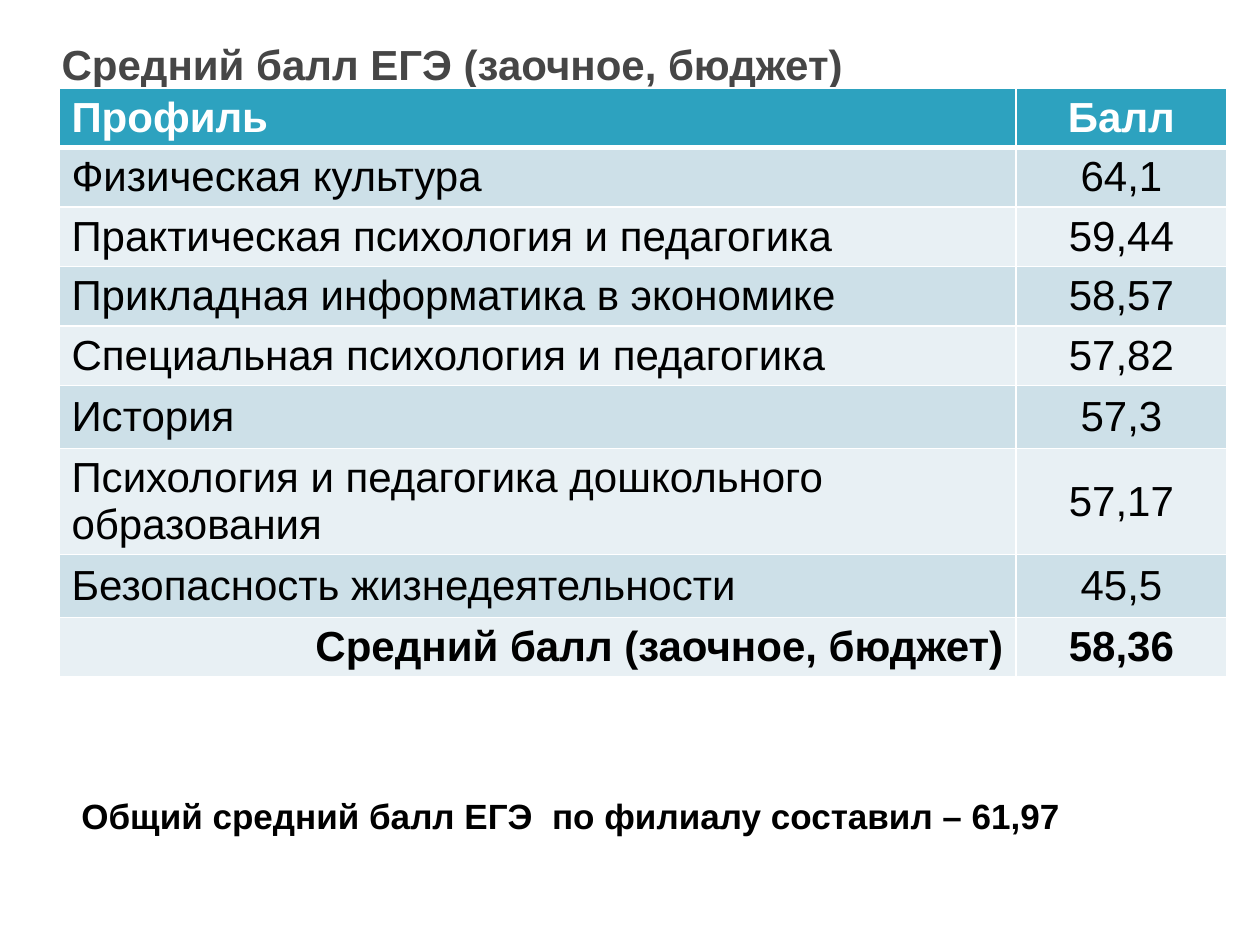
"""Build a slide with a table of average exam scores by study profile."""
from dataclasses import dataclass

from lxml import etree
from pptx import Presentation
from pptx.dml.color import RGBColor
from pptx.enum.text import MSO_ANCHOR, PP_ALIGN
from pptx.oxml.ns import qn
from pptx.util import Pt

LEFT, CENTER, RIGHT = PP_ALIGN.LEFT, PP_ALIGN.CENTER, PP_ALIGN.RIGHT
TOP, MIDDLE = MSO_ANCHOR.TOP, MSO_ANCHOR.MIDDLE

TITLE = "Средний балл ЕГЭ (заочное, бюджет)"
HEADER = ("Профиль", "Балл")
SCORES = [
    ("Физическая культура", "64,1"),
    ("Практическая психология и педагогика", "59,44"),
    ("Прикладная информатика в экономике", "58,57"),
    ("Специальная психология и педагогика", "57,82"),
    ("История", "57,3"),
    ("Психология и педагогика дошкольного образования", "57,17"),
    ("Безопасность жизнедеятельности", "45,5"),
]
TOTAL = ("Средний балл (заочное, бюджет)", "58,36")
SUMMARY = "Общий средний балл ЕГЭ  по филиалу составил – 61,97"

EMU_PER_PX = 914400 // 126
SLIDE_SIZE = (1260, 945)
TITLE_BOX = (49, 20, 1155, 88)
TABLE_BOX = (59, 88, 1168, 617)
SUMMARY_BOX = (69, 788, 1162, 55)
COLUMN_WIDTHS = (957, 211)
ROW_HEIGHT, TALL_ROW_HEIGHT = 52, 63
TALL_ROWS = (5, 6, 7)


@dataclass(frozen=True)
class Theme:
    font: str = "Arial"
    title: str = "464646"
    text: str = "000000"
    white: str = "FFFFFF"
    header: str = "2DA2BF"
    bands: tuple = ("E8F0F4", "CDE0E8")
    body_size: int = 24
    summary_size: int = 20
    border: int = 1
    header_border: int = 3


THEME = Theme()


def px(value):
    return value * EMU_PER_PX


def place(shape, box):
    shape.left, shape.top, shape.width, shape.height = map(px, box)


def write(frame, text, size=THEME.body_size, color=THEME.text, bold=False, align=LEFT):
    frame.word_wrap = True
    paragraph = frame.paragraphs[0]
    paragraph.alignment = align
    run = paragraph.add_run()
    run.text = text
    font = run.font
    font.name, font.size, font.bold = THEME.font, Pt(size), bold
    font.color.rgb = RGBColor.from_string(color)


def set_borders(cell, widths):
    properties = cell._tc.get_or_add_tcPr()
    for index, (side, width) in enumerate(widths.items()):
        line = etree.Element(qn(f"a:ln{side}"), w=str(Pt(width)))
        fill = etree.SubElement(line, qn("a:solidFill"))
        etree.SubElement(fill, qn("a:srgbClr"), val=THEME.white)
        properties.insert(index, line)


def add_scores(slide):
    rows = [HEADER, *SCORES, TOTAL]
    last = len(rows) - 1
    frame = slide.shapes.add_table(len(rows), len(HEADER), *map(px, TABLE_BOX))
    table = frame.table
    for column, width in zip(table.columns, COLUMN_WIDTHS):
        column.width = px(width)
    for i, values in enumerate(rows):
        table.rows[i].height = px(TALL_ROW_HEIGHT if i in TALL_ROWS else ROW_HEIGHT)
        is_header = i == 0
        fill = THEME.header if is_header else THEME.bands[i % 2]
        for j, value in enumerate(values):
            cell = table.cell(i, j)
            cell.fill.solid()
            cell.fill.fore_color.rgb = RGBColor.from_string(fill)
            is_total_label = i == last and j == 0
            cell.vertical_anchor = TOP if is_header or is_total_label else MIDDLE
            write(
                cell.text_frame,
                value,
                color=THEME.white if is_header else THEME.text,
                bold=i in (0, last),
                align=CENTER if j else RIGHT if is_total_label else LEFT,
            )
            widths = dict.fromkeys("LRTB", THEME.border)
            if is_header:
                widths["B"] = THEME.header_border
            elif i == 1:
                widths["T"] = THEME.header_border
            set_borders(cell, widths)
    place(frame, TABLE_BOX)


def main():
    presentation = Presentation()
    presentation.slide_width, presentation.slide_height = map(px, SLIDE_SIZE)
    slide = presentation.slides.add_slide(presentation.slide_layouts[5])
    title = slide.shapes.title
    place(title, TITLE_BOX)
    title.text_frame.vertical_anchor = MIDDLE
    write(title.text_frame, TITLE, color=THEME.title, bold=True)
    add_scores(slide)
    summary = slide.shapes.add_textbox(*map(px, SUMMARY_BOX))
    write(summary.text_frame, SUMMARY, size=THEME.summary_size, bold=True)
    presentation.save("out.pptx")


if __name__ == "__main__":
    main()
